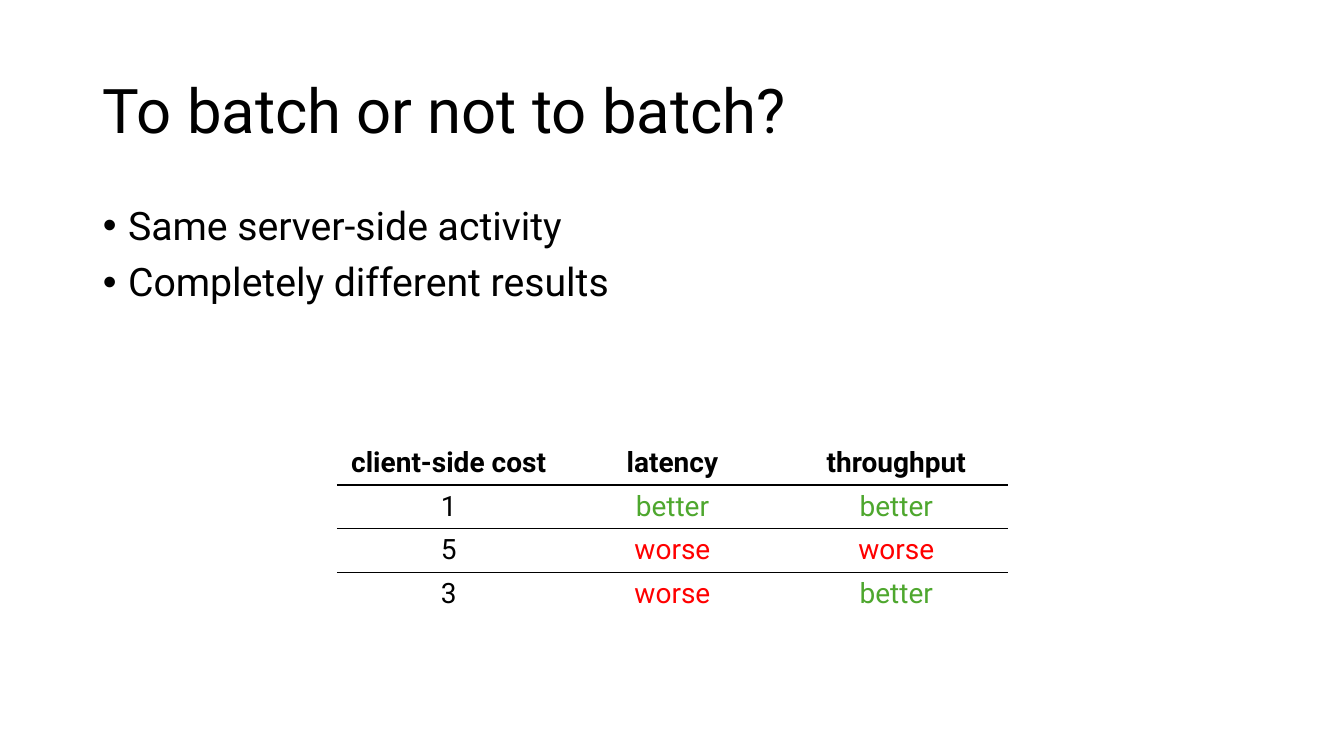
from dataclasses import dataclass

from lxml import etree
from pptx import Presentation
from pptx import util as u
from pptx.dml.color import RGBColor
from pptx.enum import text
from pptx.oxml.ns import qn


@dataclass(frozen=True)
class Theme:
    font: str = "Roboto"
    ink: str = "000000"
    better: str = "4EA72E"
    worse: str = "FF0000"
    title_size: int = 44
    bullet_size: int = 28
    cell_size: int = 20
    rule_width: int = 1
    plain_table: str = "{2D5ABB26-0587-4C30-8999-92F81FD0307C}"


THEME = Theme()
VERDICT_COLOURS = {"better": THEME.better, "worse": THEME.worse}

BULLETS = ["Same server-side activity", "Completely different results"]
COSTS = [
    ["client-side cost", "latency", "throughput"],
    ["1", "better", "better"],
    ["5", "worse", "worse"],
    ["3", "worse", "better"],
]
RULED_ROWS = 2


def style(paragraph, size, colour=THEME.ink, bold=False):
    font = paragraph.font
    font.name = THEME.font
    font.size = u.Pt(size)
    font.bold = bold
    font.color.rgb = RGBColor.from_string(colour)


def place(holder, left, top, width, height):
    holder.left, holder.top = u.Inches(left), u.Inches(top)
    holder.width, holder.height = u.Inches(width), u.Inches(height)
    holder.text_frame.auto_size = text.MSO_AUTO_SIZE.NONE


def add_title(slide, wording):
    title = slide.shapes.title
    place(title, 0.92, 0.4, 11.5, 1.45)
    title.text_frame.vertical_anchor = text.MSO_ANCHOR.MIDDLE
    title.text_frame.text = wording
    heading = title.text_frame.paragraphs[0]
    heading.alignment = text.PP_ALIGN.LEFT
    heading.line_spacing = 0.9
    style(heading, THEME.title_size)


def add_bullets(slide, points):
    body = slide.placeholders[1]
    place(body, 0.92, 2, 11.5, 4.76)
    body.text_frame.text = "\n".join(points)
    for point in body.text_frame.paragraphs:
        point.line_spacing = 0.9
        point.space_before = u.Pt(10)
        properties = point._p.get_or_add_pPr()
        properties.set("marL", str(u.Inches(0.25)))
        properties.set("indent", str(u.Inches(-0.25)))
        etree.SubElement(properties, qn("a:buChar"), char="•")
        style(point, THEME.bullet_size)


def rule_edge(cell, edge):
    """Draw a border on one edge of a cell: lnT or lnB."""
    properties = cell._tc.get_or_add_tcPr()
    line = etree.Element(qn(f"a:{edge}"), w=str(u.Pt(THEME.rule_width)))
    fill = etree.SubElement(line, qn("a:solidFill"))
    etree.SubElement(fill, qn("a:srgbClr"), val=THEME.ink)
    properties.insert(len(properties) - 1, line)  # borders precede the fill


def add_cost_table(slide, rows):
    frame = slide.shapes.add_table(
        len(rows), len(rows[0]),
        u.Inches(3.34), u.Inches(4.38), u.Inches(6.66), u.Inches(1.73))
    table = frame.table
    table.horz_banding = False
    table._tbl.tblPr.find(qn("a:tableStyleId")).text = THEME.plain_table
    for r, row in enumerate(rows):
        for c, wording in enumerate(row):
            cell = table.cell(r, c)
            cell.text = wording
            cell.fill.background()
            entry = cell.text_frame.paragraphs[0]
            entry.alignment = text.PP_ALIGN.CENTER
            style(entry, THEME.cell_size,
                  VERDICT_COLOURS.get(wording, THEME.ink), bold=r == 0)
            if 0 < r <= RULED_ROWS:
                rule_edge(cell, "lnT")
            if r < RULED_ROWS:
                rule_edge(cell, "lnB")


def main():
    deck = Presentation()
    deck.slide_width, deck.slide_height = u.Inches(13.33), u.Inches(7.5)
    slide = deck.slides.add_slide(deck.slide_layouts.get_by_name("Title and Content"))
    add_title(slide, "To batch or not to batch?")
    add_bullets(slide, BULLETS)
    add_cost_table(slide, COSTS)
    deck.save("out.pptx")


if __name__ == "__main__":
    main()
